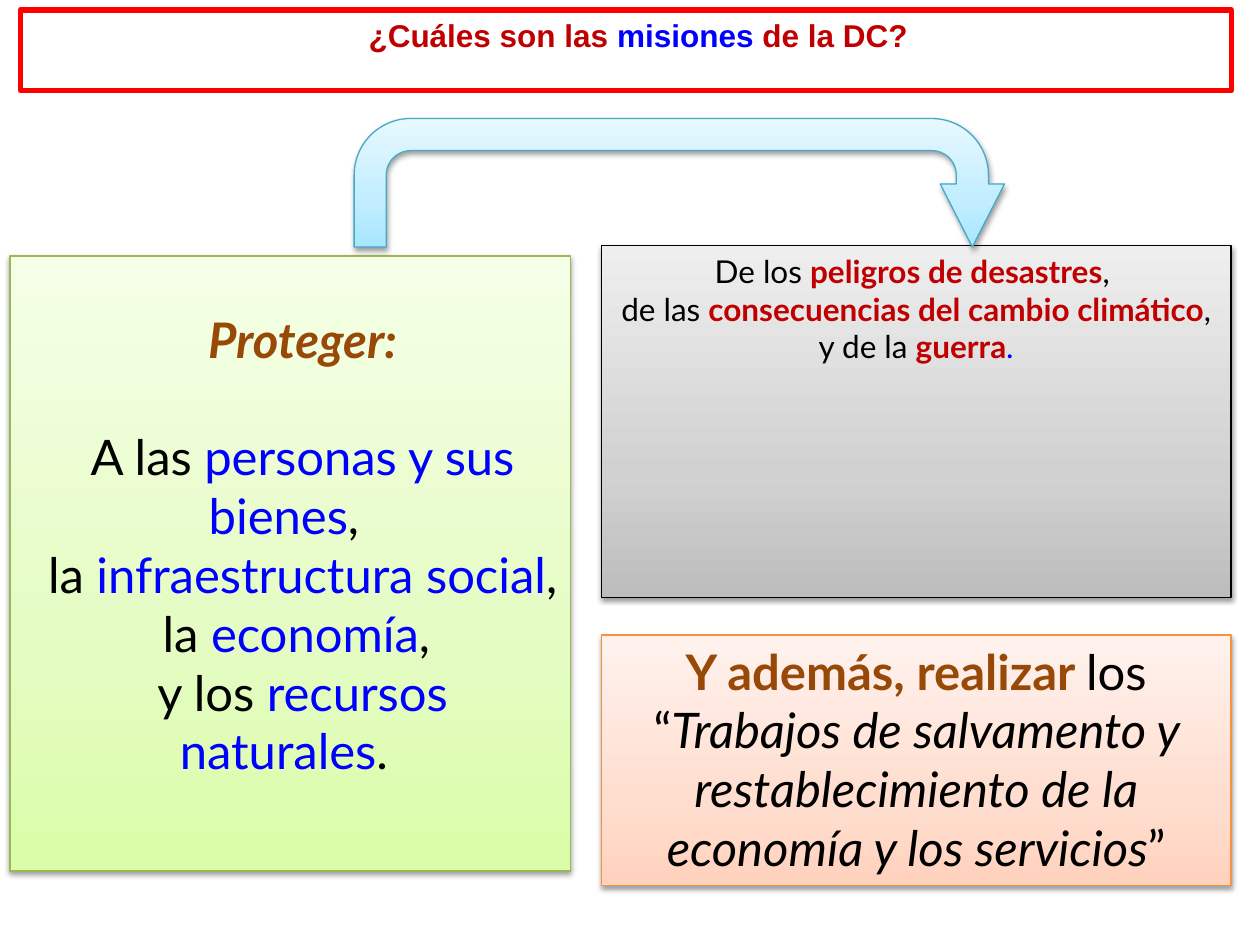
from dataclasses import dataclass

from lxml.etree import SubElement as Sub
from pptx import Presentation
from pptx.dml.color import RGBColor as Rgb
from pptx.enum.shapes import MSO_SHAPE as Kind
from pptx.enum.text import MSO_ANCHOR as Anchor
from pptx.enum.text import MSO_AUTO_SIZE as Fit
from pptx.enum.text import PP_ALIGN as Align
from pptx.oxml.ns import qn
from pptx.util import Cm, Pt

BLACK, BLUE, RED, BROWN = "000000", "0000FF", "C00000", "984807"


@dataclass
class Panel:
    area: tuple
    stops: tuple
    edge: str
    kind: Kind = Kind.RECTANGLE


GREEN = Panel((0.2, 5.16, 11.3, 12.4), ("DAFDA7", "E4FCC2", "F5FFE7"), "98B955")
GREY = Panel((12.12, 4.95, 12.7, 7.09), ("BDBDBD", "D1D1D1", "EEEEEE"), BLACK)
ARROW = Panel((7.14, 2.39, 13.11, 2.59), ("A7E6FF", "C1EDFF", "E7F8FF"),
              "46AAC5", Kind.U_TURN_ARROW)
PEACH = Panel((12.12, 12.8, 12.7, 5.05), ("FFD2BD", "FFDED0", "FFF2ED"), "F69240")


def color(code: str) -> Rgb:
    return Rgb.from_string(code)


def border(shape, code: str, width: float) -> None:
    shape.line.color.rgb = color(code)
    shape.line.width = Pt(width)


def shade(shape, stops: tuple) -> None:
    shape.fill.gradient()
    shape.fill.gradient_angle = 90
    group = shape._element.spPr.find(".//" + qn("a:gsLst"))
    group.clear()
    for place, code in zip((0, 35, 100), stops):
        stop = Sub(group, qn("a:gs"), pos=str(place * 1000))
        Sub(stop, qn("a:srgbClr"), val=code)


def shadow(shape) -> None:
    shape.shadow.inherit = False
    effect = shape._element.spPr.find(qn("a:effectLst"))
    outer = Sub(effect, qn("a:outerShdw"), blurRad=str(Pt(3.1)),
                dist=str(Pt(1.6)), dir="5400000", rotWithShape="0")
    tint = Sub(outer, qn("a:srgbClr"), val=BLACK)
    Sub(tint, qn("a:alpha"), val="38000")


def draw(slide, panel: Panel):
    shape = slide.shapes.add_shape(panel.kind, *map(Cm, panel.area))
    shade(shape, panel.stops)
    border(shape, panel.edge, 0.75)
    shadow(shape)
    return shape


def write(para, text: str, *, size: float, font: str = "Lato", ink: str = BLACK,
          bold: bool = False, slant: bool = False) -> None:
    run = para.add_run()
    run.text = text
    face = run.font
    face.name, face.size = font, Pt(size)
    face.bold, face.italic = bold, slant
    face.color.rgb = color(ink)


def fill(shape, lines: list, size: float, font: str = "Lato",
         indent: float = 0, anchor: Anchor = Anchor.TOP):
    frame = shape.text_frame
    frame.word_wrap, frame.auto_size = True, Fit.NONE
    frame.vertical_anchor = anchor
    for index, line in enumerate(lines):
        para = frame.add_paragraph() if index else frame.paragraphs[0]
        para.alignment = Align.CENTER
        props = para._p.get_or_add_pPr()
        props.set("marL", "0")
        props.set("indent", str(Cm(indent)))
        for text, style in line:
            write(para, text, size=size, font=font, **style)
    return frame


def main() -> None:
    deck = Presentation()
    deck.slide_width, deck.slide_height = Cm(25.4), Cm(19.05)
    slide = deck.slides.add_slide(deck.slide_layouts[5])
    plain, blue = {}, {"ink": BLUE}
    red, brown = ({"ink": ink, "bold": True} for ink in (RED, BROWN))

    title = slide.shapes.title
    title.left, title.top, title.width, title.height = map(
        Cm, (0.41, 0.2, 24.41, 1.63))
    border(title, "FF0000", 3)
    fill(title, [[("¿Cuáles son las ", red),
                  ("misiones", {"ink": BLUE, "bold": True}),
                  (" de la DC?", red)]], 18, font="Arial", indent=0.5)

    goals = (("A las ", "personas y sus bienes", ", "),
             ("la ", "infraestructura social", ", "),
             ("la ", "economía", ", "),
             ("y los ", "recursos naturales", ". "))
    lines = [list(zip(goal, (plain, blue, plain))) for goal in goals]
    head = [("Proteger:", {**brown, "slant": True})]
    frame = fill(draw(slide, GREEN), [head, *lines], 28, indent=0.5,
                 anchor=Anchor.MIDDLE)
    frame.margin_bottom = Cm(0.89)
    frame.paragraphs[0].space_after = Pt(33.6)

    fill(draw(slide, GREY), [
        [("De los ", plain), ("peligros de desastres", red), (", ", plain)],
        [("de las ", plain), ("consecuencias del cambio climático", red),
         (", y de la ", plain), ("guerra", red), (".", blue)],
    ], 18)

    arrow = draw(slide, ARROW)
    for index, value in enumerate((0.25, 0.25, 0.49, 0.44, 1)):
        arrow.adjustments[index] = value

    fill(draw(slide, PEACH), [[
        ("Y además, realizar ", brown), ("los “", plain),
        ("Trabajos de salvamento y restablecimiento de la economía y los servicios",
         {"slant": True}), ("”", plain)]], 28)

    deck.save("out.pptx")


if __name__ == "__main__":
    main()
